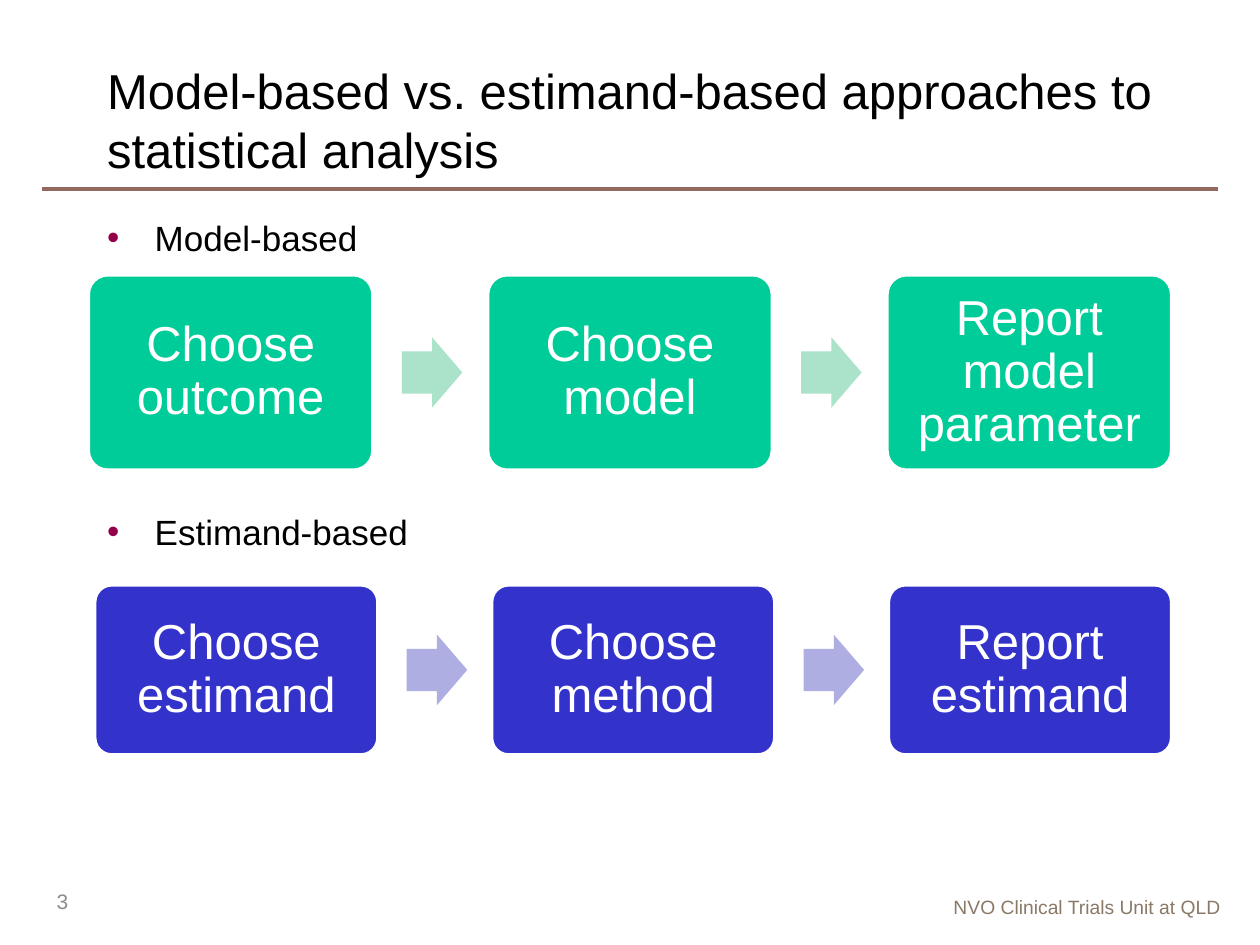
from lxml import etree
from pptx import Presentation
from pptx.dml.color import RGBColor
from pptx.enum import shapes, text
from pptx.oxml.ns import qn
from pptx.util import Cm, Pt

BLACK = RGBColor(0x00, 0x00, 0x00)
WHITE = RGBColor(0xFF, 0xFF, 0xFF)
GREEN = RGBColor(0x00, 0xCC, 0x99)
MINT = RGBColor(0xAB, 0xE2, 0xCA)
BLUE = RGBColor(0x33, 0x33, 0xCC)
LILAC = RGBColor(0xAE, 0xAE, 0xE2)
BROWN = RGBColor(0x91, 0x69, 0x5F)
TAUPE = RGBColor(0x8A, 0x79, 0x67)
GREY = RGBColor(0x8C, 0x8C, 0x8C)
PLUM = RGBColor(0x92, 0x00, 0x49)

KIND = shapes.MSO_SHAPE
MID = text.MSO_ANCHOR.MIDDLE
LEFT = text.PP_ALIGN.LEFT


def write(frame, words, size=20, color=BLACK, align=LEFT, anchor=None,
          space=None, gap=0):
    frame.word_wrap = True
    if anchor is not None:
        frame.vertical_anchor = anchor
    lines = [words] if isinstance(words, str) else words
    for i, line in enumerate(lines):
        para = frame.add_paragraph() if i else frame.paragraphs[0]
        para.alignment = align
        if space:
            para.line_spacing = space
        if i and gap:
            para.space_before = Pt(gap)
        run = para.add_run()
        run.text = line
        run.font.name = "Arial"
        run.font.size = Pt(size)
        run.font.color.rgb = color
    return frame


def add_text(slide, box, words, **style):
    area = slide.shapes.add_textbox(*map(Cm, box))
    return write(area.text_frame, words, **style)


def add_dots(frame):
    for para in frame.paragraphs:
        props = para._p.get_or_add_pPr()
        props.set("marL", str(Cm(0.96)))
        props.set("indent", str(Cm(-0.96)))
        tint = etree.SubElement(props, qn("a:buClr"))
        etree.SubElement(tint, qn("a:srgbClr"), val=str(PLUM))
        etree.SubElement(props, qn("a:buFont"), typeface="Arial")
        etree.SubElement(props, qn("a:buChar"), char="•")


def add_form(slide, kind, box, fill, *adjust):
    form = slide.shapes.add_shape(kind, *map(Cm, box))
    form.shadow.inherit = False
    form.fill.solid()
    form.fill.fore_color.rgb = fill
    form.line.fill.background()
    for i, value in enumerate(adjust):
        form.adjustments[i] = value
    return form


def add_step(slide, box, words, fill):
    step = add_form(slide, KIND.ROUNDED_RECTANGLE, box, fill, 0.1)
    step.line.color.rgb = WHITE
    step.line.width = Pt(2)
    frame = step.text_frame
    frame.margin_left = frame.margin_right = Cm(0.4)
    frame.margin_top = frame.margin_bottom = Cm(0.4)
    write(frame, words, size=28, color=WHITE, anchor=MID, space=0.9,
          align=text.PP_ALIGN.CENTER)


def add_flow(slide, steps, left, top, width, height, pitch, fill, pale):
    wide, high = 1.22, 1.42
    for i, words in enumerate(steps):
        x = left + i * pitch
        if i:
            tip = (x - pitch + width + 0.58, top + (height - high) / 2,
                   wide, high)
            add_form(slide, KIND.RIGHT_ARROW, tip, pale, 0.6, 0.5)
        add_step(slide, (x, top, width, height), words, fill)


def add_rule(slide, left, right, y):
    rule = slide.shapes.add_connector(
        shapes.MSO_CONNECTOR.STRAIGHT, Cm(left), Cm(y), Cm(right), Cm(y))
    rule.line.color.rgb = BROWN
    rule.line.width = Pt(1.75)
    etree.SubElement(rule._element.spPr, qn("a:effectLst"))


def main():
    deck = Presentation()
    deck.slide_width, deck.slide_height = Cm(25.4), Cm(19.05)
    slide = deck.slides.add_slide(deck.slide_layouts[6])

    add_rule(slide, 0.85, 24.55, 3.81)
    add_text(slide, (16.4, 17.93, 8.46, 0.74),
             "NVO Clinical Trials Unit at QLD", size=11, color=TAUPE,
             align=text.PP_ALIGN.RIGHT)
    add_text(slide, (1.91, 1.27, 21.74, 2.26),
             "Model-based vs. estimand-based approaches to "
             "statistical analysis", size=28, anchor=MID)
    add_dots(add_text(slide, (1.91, 4.24, 21.59, 12.7),
                      ["Model-based", "Estimand-based"], gap=144))
    add_flow(slide,
             ["Choose outcome", "Choose model", "Report model parameter"],
             1.78, 5.54, 5.74, 3.94, 8.05, GREEN, MINT)
    add_flow(slide,
             ["Choose estimand", "Choose method", "Report estimand"],
             1.91, 11.79, 5.71, 3.43, 8, BLUE, LILAC)
    add_text(slide, (0.89, 17.65, 5.72, 1.02), "3", size=12, color=GREY,
             anchor=MID)
    deck.save("out.pptx")


if __name__ == "__main__":
    main()
